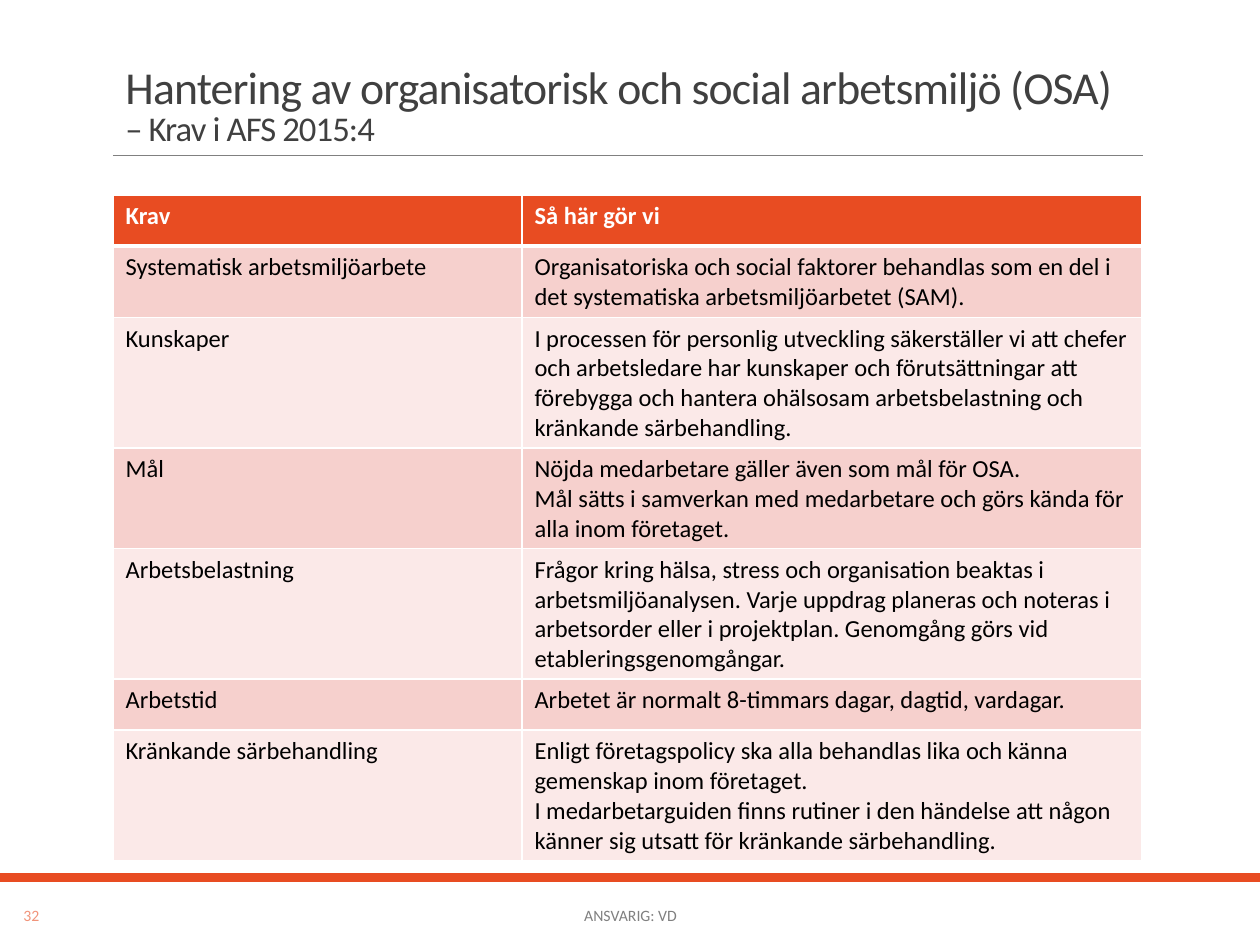
from dataclasses import dataclass

from pptx import Presentation
from pptx.dml.color import RGBColor
from pptx.enum.shapes import MSO_CONNECTOR as Conn, MSO_SHAPE as Shape
from pptx.enum.text import MSO_ANCHOR as Anchor, PP_ALIGN as Align
from pptx.oxml.ns import qn
from pptx.util import Emu, Pt
from lxml.etree import SubElement

SCALE = 914400 / 126
ORANGE, GREY, WHITE = "E84C22", "808080", "FFFFFF"
BANDS = ("FBE9E8", "F6D0CD")
ROW_H = 51


@dataclass
class Run:
    text: str
    size: float
    color: str
    bold: bool = False
    space: int = 0


@dataclass
class Label:
    box: tuple
    runs: list
    align: Align = Align.CENTER
    anchor: Anchor = Anchor.MIDDLE
    lead: float = 1.0


LABELS = [
    Label((113, 39, 1040, 116),
          [Run("Hantering av organisatorisk och social arbetsmiljö (OSA)",
               26.1, "404040", space=-50),
           Run("– Krav i AFS 2015:4", 19.8, "404040", space=-50)],
          Align.LEFT, Anchor.BOTTOM, 0.85),
    Label((5, 890, 53, 50), [Run("32", 9, "F1947A")]),
    Label((381, 890, 499, 50), [Run("ANSVARIG: VD", 9, GREY)]),
]

ROWS = [
    ("Krav", "Så här gör vi"),
    ("Systematisk arbetsmiljöarbete",
     "Organisatoriska och social faktorer behandlas som en del i det "
     "systematiska arbetsmiljöarbetet (SAM)."),
    ("Kunskaper",
     "I processen för personlig utveckling säkerställer vi att chefer och "
     "arbetsledare har kunskaper och förutsättningar att förebygga och "
     "hantera ohälsosam arbetsbelastning och kränkande särbehandling."),
    ("Mål",
     "Nöjda medarbetare gäller även som mål för OSA.\n"
     "Mål sätts i samverkan med medarbetare och görs kända för alla inom "
     "företaget."),
    ("Arbetsbelastning",
     "Frågor kring hälsa, stress och organisation beaktas i "
     "arbetsmiljöanalysen. Varje uppdrag planeras och noteras i arbetsorder "
     "eller i projektplan. Genomgång görs vid etableringsgenomgångar."),
    ("Arbetstid", "Arbetet är normalt 8-timmars dagar, dagtid, vardagar."),
    ("Kränkande särbehandling",
     "Enligt företagspolicy ska alla behandlas lika och känna gemenskap inom "
     "företaget.\n"
     "I medarbetarguiden finns rutiner i den händelse att någon känner sig "
     "utsatt för kränkande särbehandling."),
]


def px(n: int) -> Emu:
    return Emu(round(n * SCALE))


def rgb(code: str) -> RGBColor:
    return RGBColor.from_string(code)


def add_run(para, item: Run) -> None:
    run = para.add_run()
    run.text = item.text
    form = {"name": "Calibri", "size": Pt(item.size), "bold": item.bold}
    for key, val in form.items():
        setattr(run.font, key, val)
    run.font.color.rgb = rgb(item.color)
    if item.space:
        run.font._element.set("spc", str(item.space))


def add_label(slide, label: Label) -> None:
    frame = slide.shapes.add_textbox(*map(px, label.box)).text_frame
    frame.word_wrap = True
    frame.vertical_anchor = label.anchor
    para = frame.paragraphs[0]
    para.alignment = label.align
    para.line_spacing = label.lead
    for i, item in enumerate(label.runs):
        if i:
            para.add_line_break()
        add_run(para, item)


def add_edges(cell, top: int, low: int) -> None:
    """Draw white cell borders; top and low are widths in points."""
    props = cell._tc.get_or_add_tcPr()
    for side, width in {"L": 1, "R": 1, "T": top, "B": low}.items():
        line = SubElement(props, qn(f"a:ln{side}"), w=str(Pt(width)))
        fill = SubElement(line, qn("a:solidFill"))
        SubElement(fill, qn("a:srgbClr"), val=WHITE)


def add_grid(slide) -> None:
    frame = slide.shapes.add_table(
        len(ROWS), 2, *map(px, (113, 195, 1029, ROW_H * len(ROWS))))
    table = frame.table
    for col, width in zip(table.columns, (409, 620)):
        col.width = px(width)
    for r, texts in enumerate(ROWS):
        head = r == 0
        table.rows[r].height = px(ROW_H)
        for c, text in enumerate(texts):
            cell = table.cell(r, c)
            add_edges(cell, 3 if r == 1 else 1, 3 if head else 1)
            cell.fill.solid()
            cell.fill.fore_color.rgb = rgb(ORANGE if head else BANDS[r % 2])
            body = cell.text_frame
            for i, part in enumerate(text.split("\n")):
                para = body.add_paragraph() if i else body.paragraphs[0]
                add_run(para, Run(part, 14, WHITE if head else "000000", head))
    frame.height = px(665)


def add_bar(slide) -> None:
    bar = slide.shapes.add_shape(Shape.RECTANGLE, *map(px, (0, 873, 1260, 9)))
    bar.shadow.inherit = False
    bar.fill.solid()
    bar.fill.fore_color.rgb = rgb(ORANGE)
    bar.line.fill.background()


def add_rule(slide) -> None:
    rule = slide.shapes.add_connector(
        Conn.STRAIGHT, *map(px, (113, 155, 1143, 155)))
    rule.line.color.rgb = rgb(GREY)
    rule.line.width = Pt(0.5)
    SubElement(rule._element.spPr, qn("a:effectLst"))


def main() -> None:
    deck = Presentation()
    deck.slide_width, deck.slide_height = px(1260), px(945)
    slide = deck.slides.add_slide(deck.slide_layouts[6])
    add_bar(slide)
    add_rule(slide)
    title, *foot = LABELS
    add_label(slide, title)
    add_grid(slide)
    for label in foot:
        add_label(slide, label)
    deck.save("out.pptx")


if __name__ == "__main__":
    main()
